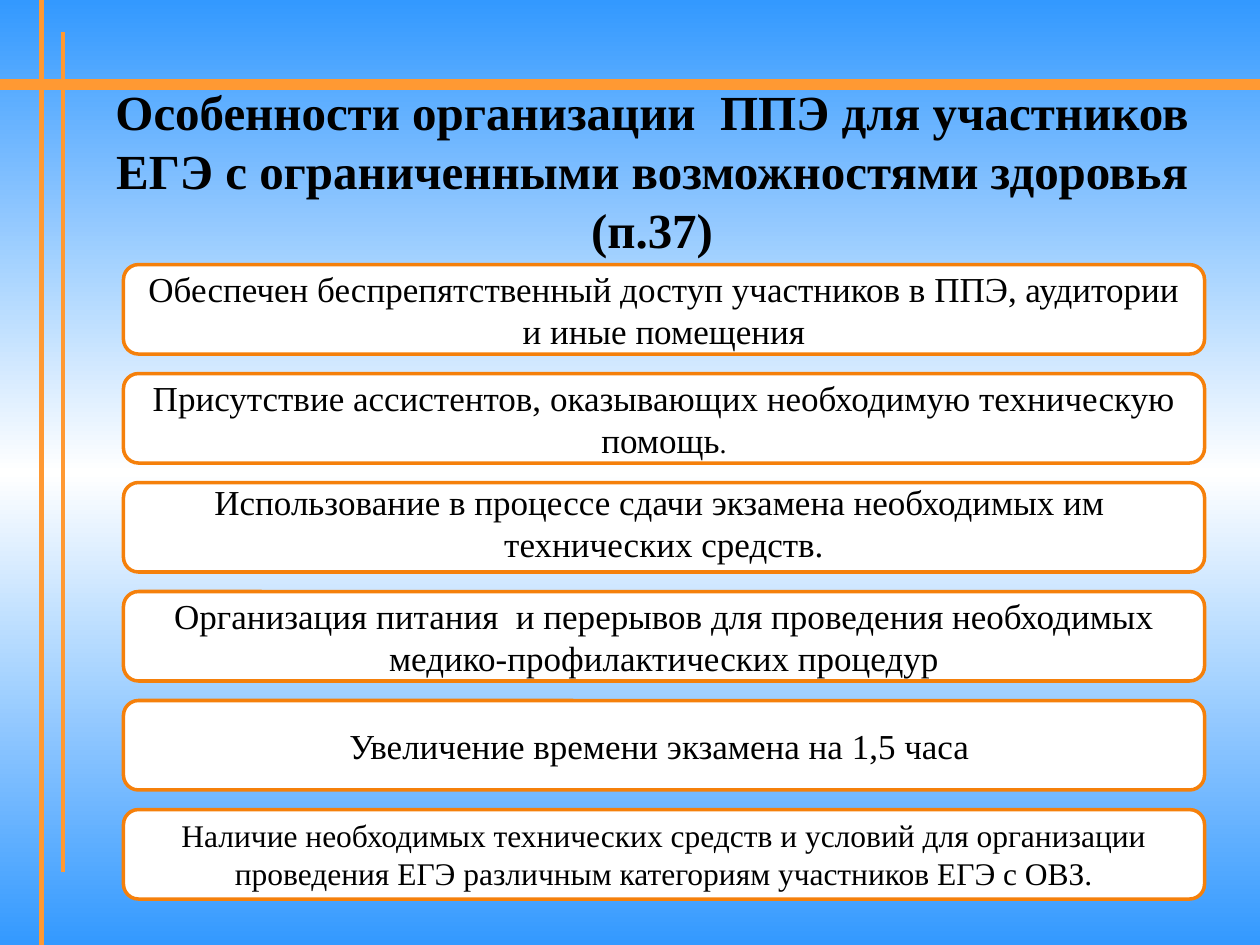
from copy import deepcopy

from lxml.etree import SubElement
from pptx import Presentation
from pptx.dml.color import RGBColor
from pptx.enum.shapes import MSO_CONNECTOR, MSO_SHAPE
from pptx.enum.text import MSO_ANCHOR, MSO_AUTO_SIZE, PP_ALIGN
from pptx.oxml.ns import qn
from pptx.util import Inches, Pt

COLORS = {
    "sky": "3399FF",
    "white": "FFFFFF",
    "rule": "FF9933",
    "border": "F5800B",
    "text": "000000",
}
FONT = "Times New Roman"
TITLE = ("Особенности организации  ППЭ для участников ЕГЭ "
         "с ограниченными возможностями здоровья (п.37)")

# Start x, start y, end x, end y, width in points
RULES = [
    (0, 0.67, 10, 0.67, 6),
    (0.33, 0, 0.33, 7.5, 3),
    (0.5, 0.25, 0.5, 6.92, 2.25),
]

# Each requirement is a list of (text, size) runs
REQUIREMENTS = [
    [("Обеспечен беспрепятственный доступ участников в ППЭ, аудитории и иные помещения", 20)],
    [("Присутствие ассистентов, оказывающих необходимую техническую помощь", 20), (".", 16)],
    [("Использование в процессе сдачи экзамена необходимых им  технических средств.", 20)],
    [("Организация питания  и перерывов для проведения необходимых "
      "медико-профилактических процедур", 20)],
    [("Увеличение времени экзамена на 1,5 часа ", 20)],
    [("Наличие необходимых технических средств и условий для организации проведения ЕГЭ "
      "различным категориям участников ЕГЭ с ОВЗ.", 18)],
]
RAISED_BOX = 2  # its text sits slightly above the middle
BOX_LEFT, BOX_TOP, BOX_WIDTH, BOX_HEIGHT = 0.98, 2.1, 8.58, 0.71
BOX_STEP = 0.865


def rgb(name):
    return RGBColor.from_string(COLORS[name])


def paint_background(slide):
    fill = slide.background.fill
    fill.gradient()
    fill.gradient_angle = 90
    stop_list = slide.element.xpath(".//p:bg//a:gsLst")[0]
    stop_list.insert(1, deepcopy(stop_list[0]))
    stops = zip(fill.gradient_stops, ("sky", "white", "sky"), (0, 0.5, 1))
    for stop, color, position in stops:
        stop.color.rgb = rgb(color)
        stop.position = position


def add_rule(slide, x1, y1, x2, y2, width):
    rule = slide.shapes.add_connector(
        MSO_CONNECTOR.STRAIGHT, Inches(x1), Inches(y1), Inches(x2), Inches(y2))
    rule.line.color.rgb = rgb("rule")
    rule.line.width = Pt(width)
    SubElement(rule.element.spPr, qn("a:effectLst"))


def write_text(text_frame, runs, anchor=MSO_ANCHOR.MIDDLE, bold=False):
    text_frame.word_wrap = True
    text_frame.auto_size = MSO_AUTO_SIZE.NONE
    text_frame.vertical_anchor = anchor
    paragraph = text_frame.paragraphs[0]
    paragraph.alignment = PP_ALIGN.CENTER
    for text, size in runs:
        run = paragraph.add_run()
        run.text = text
        run.font.name = FONT
        run.font.size = Pt(size)
        run.font.bold = bold
        run.font.color.rgb = rgb("text")


def add_title(slide):
    title = slide.shapes.title
    title.left, title.top = Inches(0.51), Inches(0.6)
    title.width, title.height = Inches(9.33), Inches(1.34)
    write_text(title.text_frame, [(TITLE, 28)], anchor=MSO_ANCHOR.TOP, bold=True)


def add_requirement(slide, top, runs):
    box = slide.shapes.add_shape(
        MSO_SHAPE.ROUNDED_RECTANGLE, Inches(BOX_LEFT), Inches(top),
        Inches(BOX_WIDTH), Inches(BOX_HEIGHT))
    box.shadow.inherit = False
    box.fill.solid()
    box.fill.fore_color.rgb = rgb("white")
    box.line.color.rgb = rgb("border")
    box.line.width = Pt(2)
    write_text(box.text_frame, runs)
    return box


def main():
    presentation = Presentation()
    presentation.slide_width, presentation.slide_height = Inches(10), Inches(7.5)
    slide = presentation.slides.add_slide(presentation.slide_layouts[5])
    paint_background(slide)
    for rule in RULES:
        add_rule(slide, *rule)
    add_title(slide)
    boxes = [add_requirement(slide, BOX_TOP + index * BOX_STEP, runs)
             for index, runs in enumerate(REQUIREMENTS)]
    raised_frame = boxes[RAISED_BOX].text_frame
    raised_frame.margin_top, raised_frame.margin_bottom = 0, Inches(0.07)
    presentation.save("out.pptx")


if __name__ == "__main__":
    main()
